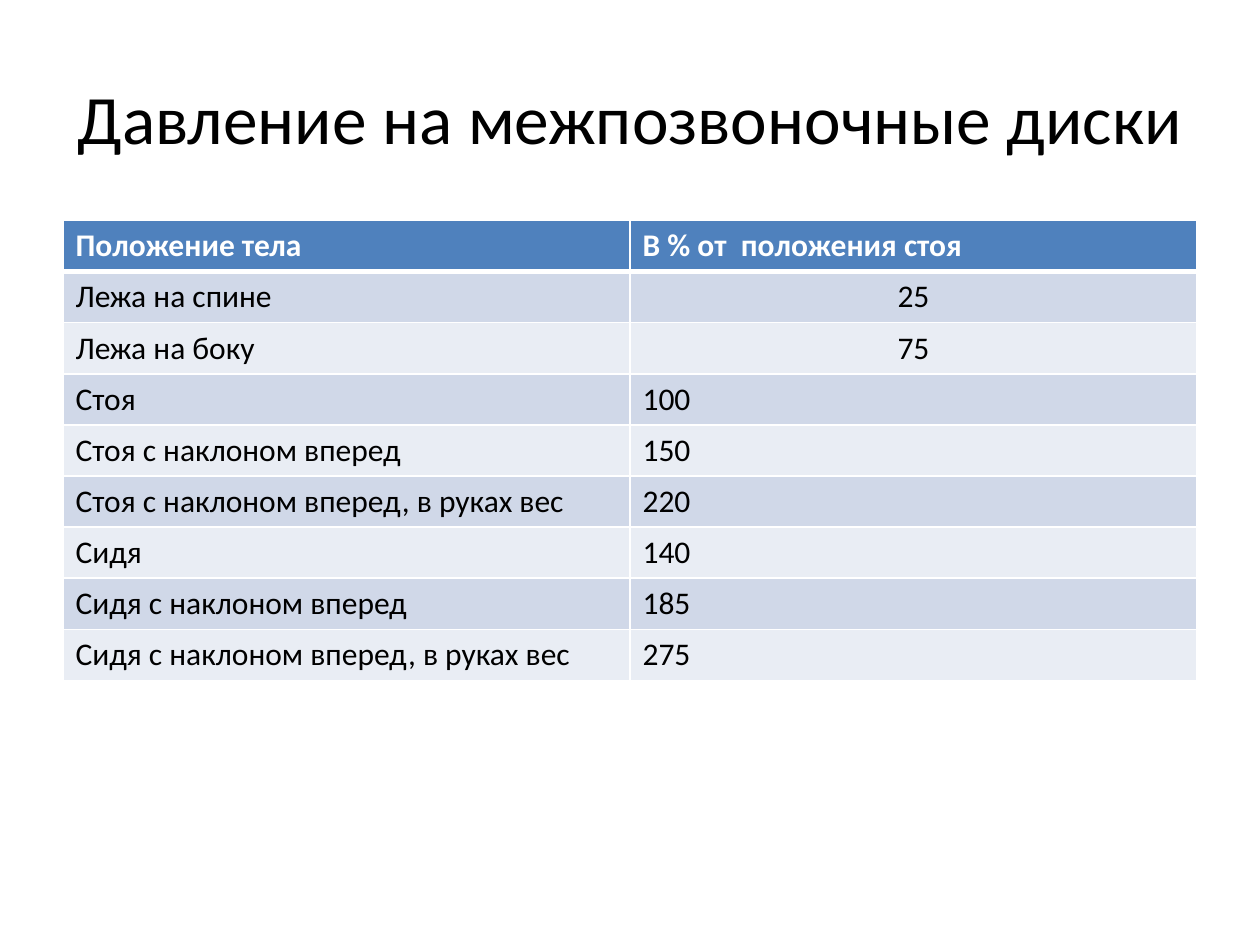
from dataclasses import dataclass

from lxml import etree
from pptx import Presentation
from pptx.dml.color import RGBColor
from pptx.enum.text import MSO_ANCHOR, MSO_AUTO_SIZE, PP_ALIGN
from pptx.oxml.ns import qn
from pptx.util import Inches, Pt

LEFT, CENTER = PP_ALIGN.LEFT, PP_ALIGN.CENTER
MIDDLE = MSO_ANCHOR.MIDDLE
NO_AUTOFIT = MSO_AUTO_SIZE.NONE
TITLE_ONLY = 5


@dataclass(frozen=True)
class Theme:
    font: str = "Calibri"
    title_size: float = 39.6
    table_size: float = 18
    text: str = "000000"
    header_text: str = "FFFFFF"
    header_fill: str = "4F81BD"
    bands: tuple = ("D0D8E8", "E9EDF4")
    border: str = "FFFFFF"
    border_width: float = 1
    header_rule_width: float = 3


THEME = Theme()

HEADINGS = ("Положение тела", "В % от  положения стоя")
# Body position, pressure in percent, alignment of the pressure
PRESSURES = (
    ("Лежа на спине", 25, CENTER),
    ("Лежа на боку", 75, CENTER),
    ("Стоя", 100, LEFT),
    ("Стоя с наклоном вперед", 150, LEFT),
    ("Стоя с наклоном вперед, в руках вес", 220, LEFT),
    ("Сидя", 140, LEFT),
    ("Сидя с наклоном вперед", 185, LEFT),
    ("Сидя с наклоном вперед, в руках вес", 275, LEFT),
)


def style_paragraph(paragraph, size, color, align=LEFT, bold=False):
    paragraph.alignment = align
    font = paragraph.font
    font.name, font.size, font.bold = THEME.font, Pt(size), bold
    font.color.rgb = RGBColor.from_string(color)


def add_title(slide, text):
    title = slide.shapes.title
    title.left, title.top = Inches(0.5), Inches(0.3)
    title.width, title.height = Inches(9), Inches(1.25)
    frame = title.text_frame
    frame.text = text
    frame.word_wrap = True
    frame.auto_size = NO_AUTOFIT
    frame.vertical_anchor = MIDDLE
    style_paragraph(frame.paragraphs[0], THEME.title_size, THEME.text, CENTER)


def set_borders(cell, top, bottom):
    """Draw all four cell borders; top and bottom widths are in points."""
    properties = cell._tc.get_or_add_tcPr()
    side = THEME.border_width
    for tag, width in (("lnL", side), ("lnR", side), ("lnT", top), ("lnB", bottom)):
        line = etree.SubElement(properties, qn(f"a:{tag}"), w=str(Pt(width)))
        fill = etree.SubElement(line, qn("a:solidFill"))
        etree.SubElement(fill, qn("a:srgbClr"), val=THEME.border)


def fill_cell(cell, text, row, align):
    is_header = row == 0
    thin, thick = THEME.border_width, THEME.header_rule_width
    set_borders(cell, thick if row == 1 else thin, thick if is_header else thin)
    background = THEME.header_fill if is_header else THEME.bands[(row - 1) % 2]
    cell.fill.solid()
    cell.fill.fore_color.rgb = RGBColor.from_string(background)
    cell.text = str(text)
    color = THEME.header_text if is_header else THEME.text
    style_paragraph(cell.text_frame.paragraphs[0], THEME.table_size, color,
                    align, is_header)


def add_pressure_table(slide):
    rows = ((*HEADINGS, LEFT), *PRESSURES)
    table = slide.shapes.add_table(
        len(rows), len(HEADINGS),
        Inches(0.5), Inches(1.75), Inches(9), Inches(3.65)).table
    for row, (position, pressure, align) in enumerate(rows):
        fill_cell(table.cell(row, 0), position, row, LEFT)
        fill_cell(table.cell(row, 1), pressure, row, align)


def main():
    presentation = Presentation()
    presentation.slide_width, presentation.slide_height = Inches(10), Inches(7.5)
    slide = presentation.slides.add_slide(presentation.slide_layouts[TITLE_ONLY])
    add_title(slide, "Давление на межпозвоночные диски")
    add_pressure_table(slide)
    presentation.save("out.pptx")


if __name__ == "__main__":
    main()
